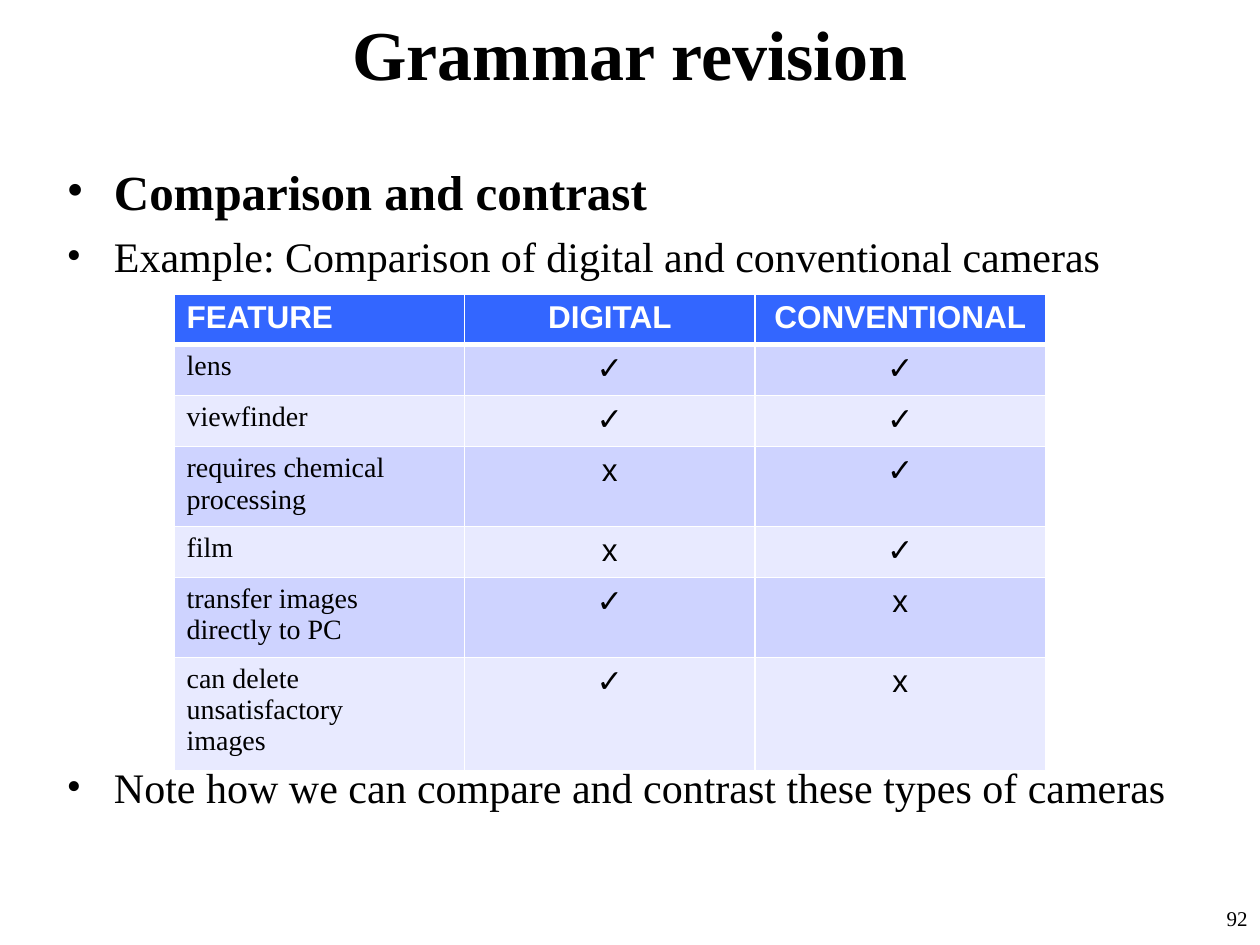
from lxml.etree import SubElement
from pptx import Presentation
from pptx.dml.color import RGBColor
from pptx.enum.text import MSO_ANCHOR, PP_ALIGN
from pptx.oxml.ns import qn
from pptx.util import Pt

COLOURS = {
    "text": "000000",
    "white": "FFFFFF",
    "header": "3366FF",
    "band_dark": "CED3FF",
    "band_light": "E8EAFF",
}
SERIF, SANS = "Times New Roman", "Arial"
YES, NO = "✓", "x"

# Text, font size, bold, space before; the last space leaves room for the table
BULLETS = [
    ("Comparison and contrast", 28, True, 3.5),
    ("Example: Comparison of digital and conventional cameras", 24, False, 6),
    ("Note how we can compare and contrast these types of cameras", 24, False, 274.5),
]
HEADINGS = ("FEATURE", "DIGITAL", "CONVENTIONAL")
FEATURES = [
    ("lens", YES, YES),
    ("viewfinder", YES, YES),
    ("requires chemical\nprocessing", NO, YES),
    ("film", NO, YES),
    ("transfer images\ndirectly to PC", YES, NO),
    ("can delete\nunsatisfactory\nimages", YES, NO),
]
HEADER_HEIGHT = 27
ROW_HEIGHTS = {1: 29.2, 2: 42.8, 3: 60.5}  # by number of text lines


def format_paragraph(paragraph, size, font=SERIF, bold=False, colour="text", **layout):
    for name, value in {"name": font, "size": Pt(size), "bold": bold}.items():
        setattr(paragraph.font, name, value)
    paragraph.font.color.rgb = RGBColor.from_string(COLOURS[colour])
    for name, value in layout.items():
        setattr(paragraph, name, value)


def add_title(slide, text):
    title = slide.shapes.title
    box = {"left": 0, "top": 0, "width": Pt(720), "height": Pt(60.5)}
    for name, value in box.items():
        setattr(title, name, value)
    title.text_frame.text = text
    title.text_frame.vertical_anchor = MSO_ANCHOR.MIDDLE
    format_paragraph(title.text_frame.paragraphs[0], 40, bold=True,
                     alignment=PP_ALIGN.CENTER)


def add_text_box(slide, text, left, top, width, height):
    shape = slide.shapes.add_textbox(Pt(left), Pt(top), Pt(width), Pt(height))
    shape.text_frame.word_wrap = True
    shape.text_frame.text = text
    return shape.text_frame.paragraphs


def add_bullet_character(paragraph, indent=27):
    properties = paragraph._p.get_or_add_pPr()
    properties.set("marL", str(Pt(indent)))
    properties.set("indent", str(-Pt(indent)))
    SubElement(properties, qn("a:buFont"), typeface=SERIF)
    SubElement(properties, qn("a:buChar"), char="•")


def add_bullets(slide):
    text = "\n".join(bullet[0] for bullet in BULLETS)
    paragraphs = add_text_box(slide, text, 31, 88.5, 663, 392)
    for paragraph, (_, size, bold, space) in zip(paragraphs, BULLETS):
        format_paragraph(paragraph, size, bold=bold, space_before=Pt(space))
        add_bullet_character(paragraph)


def add_borders(cell, top=1, bottom=1):
    properties = cell._tc.get_or_add_tcPr()
    for side, width in {"L": 1, "R": 1, "T": top, "B": bottom}.items():
        line = SubElement(properties, qn(f"a:ln{side}"), w=str(Pt(width)))
        fill = SubElement(line, qn("a:solidFill"))
        SubElement(fill, qn("a:srgbClr"), val=COLOURS["white"])


def fill_cell(cell, text, fill, alignment, **font):
    cell.text = text
    cell.fill.solid()
    cell.fill.fore_color.rgb = RGBColor.from_string(COLOURS[fill])
    for paragraph in cell.text_frame.paragraphs:
        format_paragraph(paragraph, alignment=alignment, **font)


def add_feature_table(slide):
    rows = [HEADINGS, *FEATURES]
    heights = [HEADER_HEIGHT]
    heights += [ROW_HEIGHTS[len(row[0].splitlines())] for row in FEATURES]
    table = slide.shapes.add_table(len(rows), len(HEADINGS), Pt(99.5), Pt(168),
                                   Pt(498), Pt(sum(heights))).table
    for row_index, (texts, height) in enumerate(zip(rows, heights)):
        table.rows[row_index].height = Pt(height)
        is_header = row_index == 0
        band = "band_dark" if row_index % 2 else "band_light"
        for column_index, text in enumerate(texts):
            is_label = column_index == 0
            alignment = PP_ALIGN.LEFT if is_label else PP_ALIGN.CENTER
            if is_header:
                font = {"size": 18, "font": SANS, "bold": True, "colour": "white"}
            elif is_label:
                font = {"size": 16, "font": SERIF}
            else:
                font = {"size": 18, "font": SANS}
            cell = table.cell(row_index, column_index)
            add_borders(cell, top=3 if row_index == 1 else 1,
                        bottom=3 if is_header else 1)
            fill_cell(cell, text, "header" if is_header else band, alignment, **font)


def add_slide_number(slide, number):
    paragraph = add_text_box(slide, number, 570, 514, 150, 26)[0]
    format_paragraph(paragraph, 12, alignment=PP_ALIGN.RIGHT)


def main():
    presentation = Presentation()
    presentation.slide_width, presentation.slide_height = Pt(720), Pt(540)
    title_only = presentation.slide_layouts[5]
    slide = presentation.slides.add_slide(title_only)
    add_title(slide, "Grammar revision")
    add_bullets(slide)
    add_slide_number(slide, "92")
    add_feature_table(slide)
    presentation.save("out.pptx")


if __name__ == "__main__":
    main()
